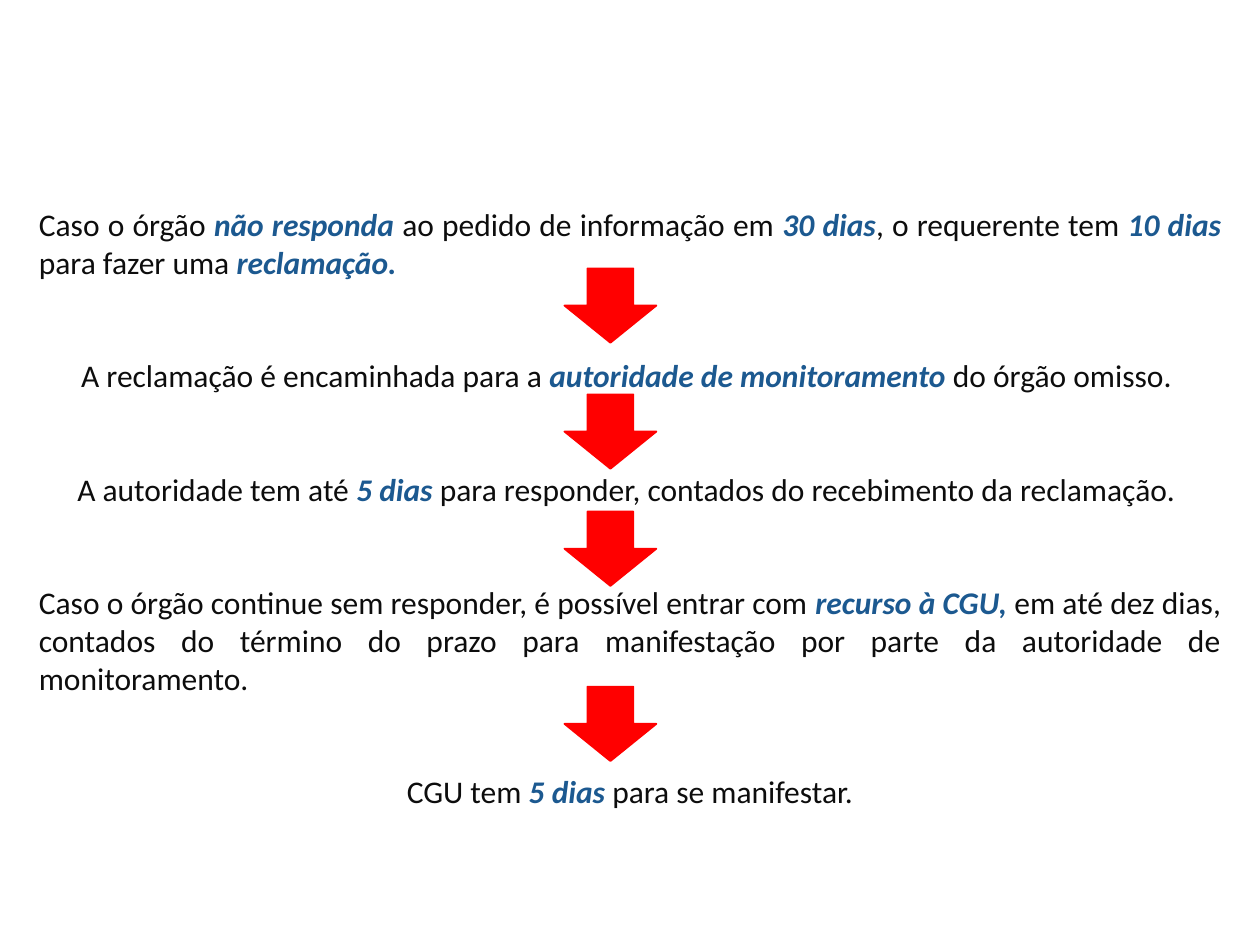
import pptx
import pptx.dml.color
import pptx.enum.shapes
import pptx.enum.text
import pptx.util

Inches = pptx.util.Inches
Pt = pptx.util.Pt
RGB = pptx.dml.color.RGBColor
Align = pptx.enum.text.PP_ALIGN

DARK = RGB(0x0D, 0x0D, 0x0D)
BLUE = RGB(0x1C, 0x59, 0x90)
RED = RGB(0xFF, 0x00, 0x00)

BASE = {"name": "Calibri", "size": Pt(18)}
PLAIN = {**BASE, "bold": False, "italic": False}
STRONG = {**BASE, "bold": True, "italic": True}
FRAME = {
    "word_wrap": True,
    "auto_size": pptx.enum.text.MSO_AUTO_SIZE.SHAPE_TO_FIT_TEXT,
}
GAP = Pt(43.2)  # two lines of text between steps

# Steps of the appeal; stars enclose the stressed words
STEPS = [
    (Align.JUSTIFY, "Caso o órgão *não responda *ao pedido de informação em "
     "*30 dias*, o requerente tem *10 dias *para fazer uma *reclamação. *"),
    (Align.CENTER, "A reclamação é encaminhada para a "
     "*autoridade de monitoramento *do órgão omisso. "),
    (Align.CENTER, "A autoridade tem até *5 dias *para responder, "
     "contados do recebimento da reclamação. "),
    (Align.JUSTIFY, "Caso o órgão continue sem responder, é possível entrar "
     "com *recurso à CGU, *em até dez dias, contados do término do prazo "
     "para manifestação por parte da autoridade de monitoramento."),
    (Align.CENTER, "CGU tem *5 dias *para se manifestar."),
]
TOPS = [2.13, 3.13, 4.06, 5.45]


def style(item, values):
    for key, value in values.items():
        setattr(item, key, value)


def add_step(para, align, text, space):
    style(para, {"alignment": align, "space_before": space})
    for index, part in enumerate(text.split("*")):
        if part:
            run = para.add_run()
            run.text = part
            stress = index % 2 == 1
            style(run.font, STRONG if stress else PLAIN)
            run.font.color.rgb = BLUE if stress else DARK


def add_steps(slide):
    box = slide.shapes.add_textbox(
        Inches(0.21), Inches(1.58), Inches(9.58), Inches(4.95))
    frame = box.text_frame
    style(frame, FRAME)
    for index, (align, text) in enumerate(STEPS):
        para = frame.add_paragraph() if index else frame.paragraphs[0]
        add_step(para, align, text, GAP if index else Pt(0))


def add_arrow(slide, top):
    arrow = slide.shapes.add_shape(
        pptx.enum.shapes.MSO_SHAPE.DOWN_ARROW,
        Inches(4.48), Inches(top), Inches(0.73), Inches(0.59))
    arrow.shadow.inherit = False
    for fill in (arrow.fill, arrow.line.fill):
        fill.solid()
        fill.fore_color.rgb = RED
    arrow.line.width = Pt(1)


def main():
    deck = pptx.Presentation()
    style(deck, {"slide_width": Inches(10), "slide_height": Inches(7.5)})
    slide = deck.slides.add_slide(deck.slide_layouts[6])

    # Text of the process
    add_steps(slide)

    # Arrows between the steps
    for top in TOPS:
        add_arrow(slide, top)

    deck.save("out.pptx")


if __name__ == "__main__":
    main()
